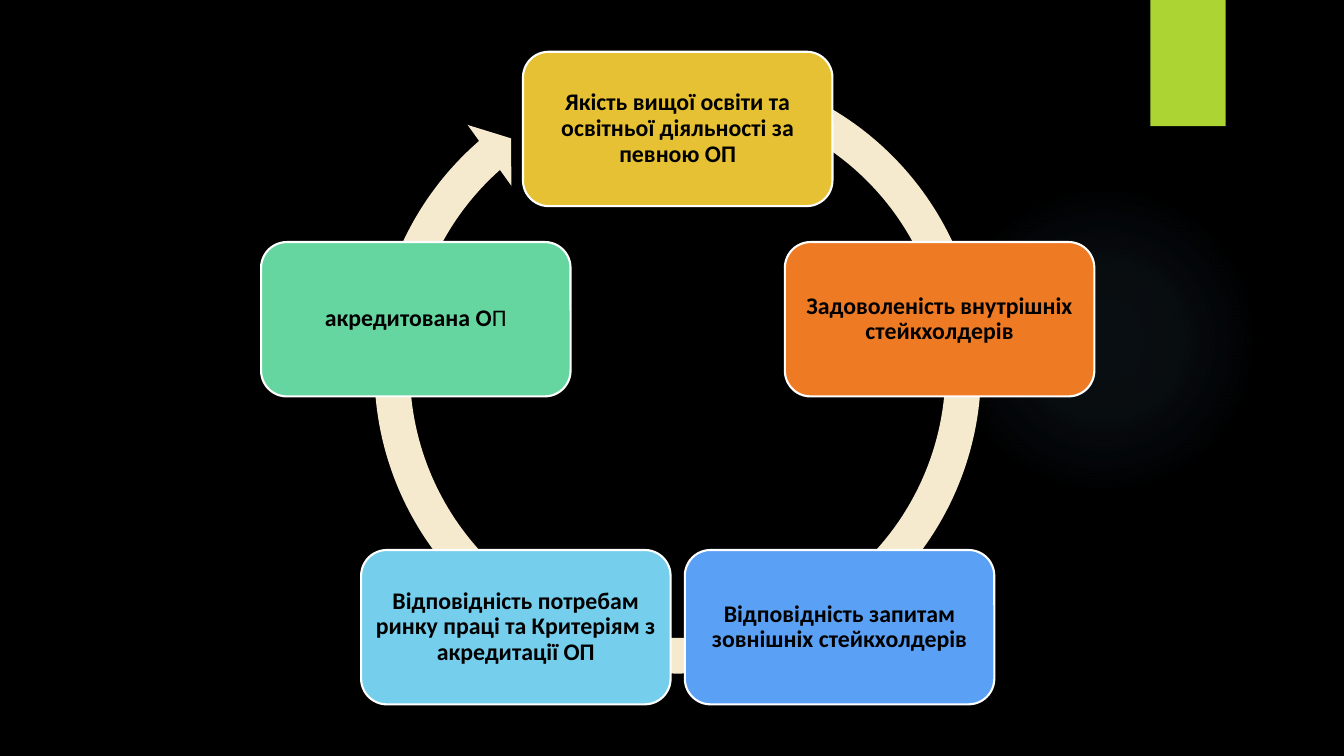
"""Build a slide with the quality cycle of an educational programme."""
from math import cos, pi, sin

from lxml.etree import SubElement
from pptx import Presentation
from pptx.dml.color import RGBColor
from pptx.enum.shapes import MSO_SHAPE
from pptx.enum.text import MSO_ANCHOR, PP_ALIGN
from pptx.oxml.ns import qn
from pptx.util import Cm, Pt

STAGES = [
    ("E6C133", [("Якість вищої освіти та освітньої діяльності за певною ОП", True)]),
    ("EF7A24", [("Задоволеність внутрішніх стейкхолдерів", True)]),
    ("5AA0F5", [("Відповідність запитам зовнішніх стейкхолдерів", True)]),
    ("75CEEC", [("Відповідність потребам ринку праці та Критеріям з акредитації ОП", True)]),
    ("65D6A0", [("акредитована О", True), ("П", False)]),
]
GLOW_COLOR = "7AC4F0"
GLOW_STOPS = [(0, 7), (36, 6), (69, 0)]
ARROW_ADJUSTMENTS = [0.055, 3.307, 137.267, 174.16, 0.058]
CENTER_X, CENTER_Y, RADIUS = 17.08, 10.19, 6.94
BOX_WIDTH, BOX_HEIGHT = 7.8, 3.89
ARROW_SIZE, ARROW_TOP = 16.28, 1.19


def color(value):
    return RGBColor.from_string(value)


def add_shape(slide, kind, left, top, width, height, fill):
    shape = slide.shapes.add_shape(kind, Cm(left), Cm(top), Cm(width), Cm(height))
    shape.shadow.inherit = False
    shape.fill.solid()
    shape.fill.fore_color.rgb = color(fill)
    shape.line.fill.background()
    return shape


def add_glow(slide):
    glow = add_shape(slide, MSO_SHAPE.OVAL, 23.9, 4.65, 7.82, 7.82, GLOW_COLOR)
    glow.fill.gradient()
    gradient = glow.element.spPr.find(qn("a:gradFill"))
    for child in list(gradient):
        gradient.remove(child)
    stops = SubElement(gradient, qn("a:gsLst"))
    for position, opacity in GLOW_STOPS:
        stop = SubElement(stops, qn("a:gs"), pos=str(position * 1000))
        tint = SubElement(stop, qn("a:srgbClr"), val=GLOW_COLOR)
        SubElement(tint, qn("a:alpha"), val=str(opacity * 1000))
    circle = SubElement(gradient, qn("a:path"), path="circle")
    SubElement(circle, qn("a:fillToRect"), l="50000", t="50000", r="50000", b="50000")


def add_cycle_arrow(slide):
    arrow = add_shape(slide, MSO_SHAPE.CIRCULAR_ARROW, CENTER_X - ARROW_SIZE / 2,
                      ARROW_TOP, ARROW_SIZE, ARROW_SIZE, "F5E9CE")
    for index, value in enumerate(ARROW_ADJUSTMENTS):
        arrow.adjustments[index] = value


def add_stage(slide, index, fill, spans):
    angle = 2 * pi * index / len(STAGES)
    left = CENTER_X + RADIUS * sin(angle) - BOX_WIDTH / 2
    top = CENTER_Y - RADIUS * cos(angle) - BOX_HEIGHT / 2
    box = add_shape(slide, MSO_SHAPE.ROUNDED_RECTANGLE, left, top, BOX_WIDTH, BOX_HEIGHT, fill)
    box.line.color.rgb = color("FFFFFF")
    box.line.width = Pt(1.5)
    frame = box.text_frame
    frame.word_wrap = True
    frame.vertical_anchor = MSO_ANCHOR.MIDDLE
    frame.margin_left = frame.margin_right = Cm(0.18)
    frame.margin_top = frame.margin_bottom = Cm(0.18)
    paragraph = frame.paragraphs[0]
    paragraph.alignment = PP_ALIGN.CENTER
    paragraph.line_spacing = 0.9
    for text, bold in spans:
        span = paragraph.add_run()
        span.text = text
        span.font.name = "Calibri"
        span.font.size = Pt(17)
        span.font.bold = bold
        span.font.color.rgb = color("000000")


def main():
    deck = Presentation()
    deck.slide_width, deck.slide_height = Cm(33.87), Cm(19.05)
    slide = deck.slides.add_slide(deck.slide_layouts[6])
    slide.background.fill.solid()
    slide.background.fill.fore_color.rgb = color("000000")
    add_glow(slide)
    add_shape(slide, MSO_SHAPE.RECTANGLE, 28.99, 0, 1.9, 3.18, "ACD433")
    add_cycle_arrow(slide)
    for index, (fill, spans) in enumerate(STAGES):
        add_stage(slide, index, fill, spans)
    deck.save("out.pptx")


if __name__ == "__main__":
    main()
